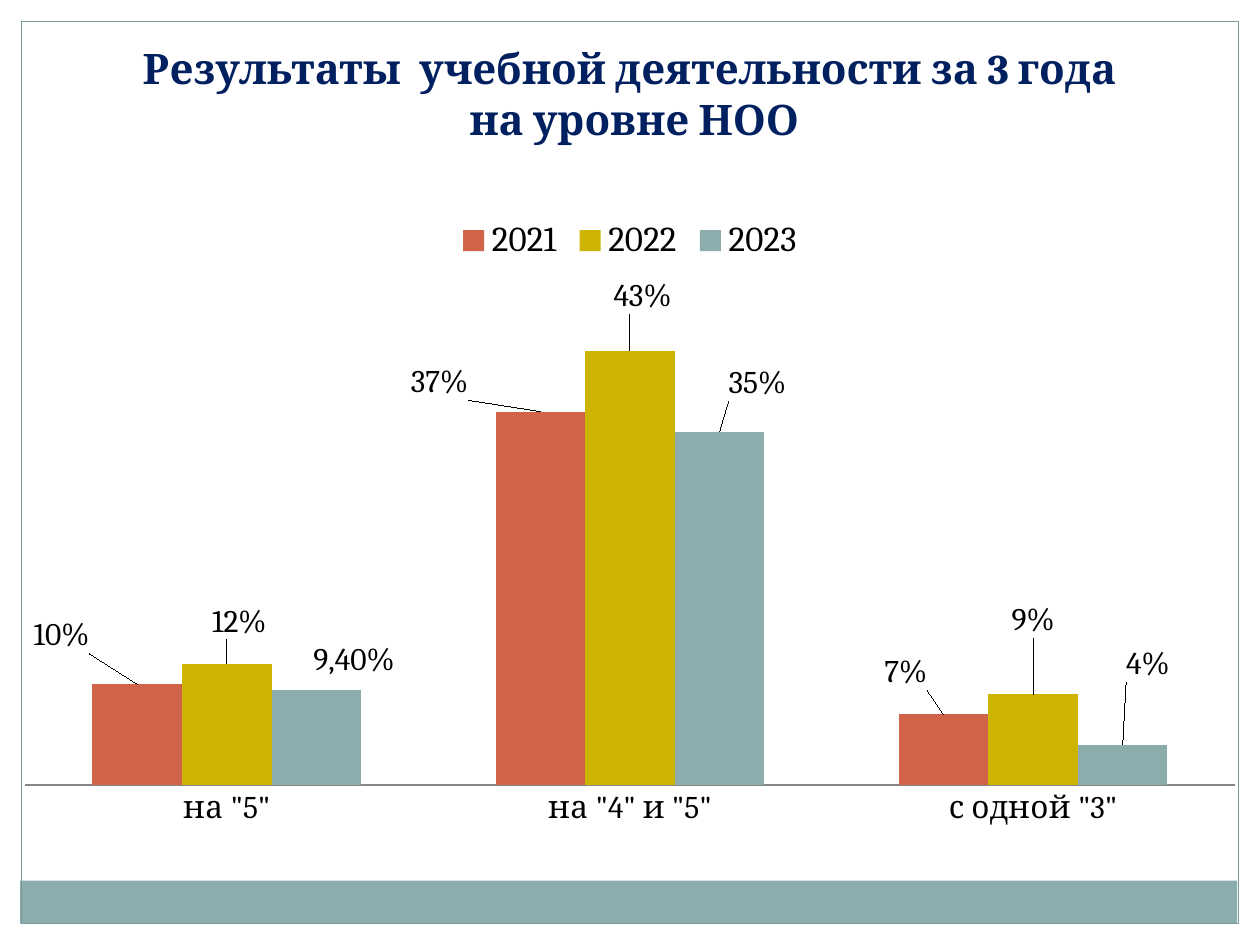
import pptx
import pptx.chart.data
import pptx.dml.color
import pptx.enum.chart
import pptx.enum.shapes
import pptx.enum.text
import pptx.oxml
import pptx.oxml.ns
import pptx.util
from dataclasses import dataclass


@dataclass(frozen=True)
class Theme:
    font: str = "Cambria"
    paper: str = "FFFFFF"
    ink: str = "000000"
    heading: str = "002060"
    band: str = "8CADAE"
    frame: str = "7C999A"
    axis: str = "878787"
    years: tuple = ("D16349", "CCB400", "8CADAE")
    heading_size: int = 24
    legend_size: int = 20
    label_size: int = 18


def rgb(value):
    return pptx.dml.color.RGBColor.from_string(value)


def assign(target, values):
    for name, value in values.items():
        setattr(target, name, value)


def manual_layout(**parts):
    """Chart layout element; each part is a share of the chart's size."""
    children = "".join(f'<c:{tag} val="{value}"/>' for tag, value in parts.items())
    return pptx.oxml.parse_xml(
        f'<c:layout {pptx.oxml.ns.nsdecls("c")}>'
        f"<c:manualLayout>{children}</c:manualLayout></c:layout>")


class SlideBuilder:
    """Places elements on a grid of 100 columns by 75 rows."""

    def __init__(self, deck, theme):
        self.theme = theme
        self.column = deck.slide_width / 100
        self.row = deck.slide_height / 75
        self.slide = deck.slides.add_slide(deck.slide_layouts[6])

    def box(self, left, top, width, height):
        return (round(left * self.column), round(top * self.row),
                round(width * self.column), round(height * self.row))

    def font(self, target, size, color, bold=False):
        assign(target, {"name": self.theme.font, "size": pptx.util.Pt(size), "bold": bold})
        target.color.rgb = rgb(color)

    def panel(self, place, fill=None, line=None):
        panel = self.slide.shapes.add_shape(
            pptx.enum.shapes.MSO_SHAPE.RECTANGLE, *self.box(*place))
        panel.shadow.inherit = False
        if fill:
            panel.fill.solid()
            panel.fill.fore_color.rgb = rgb(fill)
        else:
            panel.fill.background()
        if line:
            panel.line.color.rgb = rgb(line)
            panel.line.width = pptx.util.Pt(0.75)
        else:
            panel.line.fill.background()

    def heading(self, place, lines):
        frame = self.slide.shapes.add_textbox(*self.box(*place)).text_frame
        assign(frame, {"word_wrap": True,
                       "auto_size": pptx.enum.text.MSO_AUTO_SIZE.SHAPE_TO_FIT_TEXT})
        frame.text = "\n".join(lines)
        for paragraph in frame.paragraphs:
            paragraph.alignment = pptx.enum.text.PP_ALIGN.CENTER
            self.font(paragraph.runs[0].font, self.theme.heading_size,
                      self.theme.heading, bold=True)

    def column_chart(self, place, categories, results, plot, maximum):
        data = pptx.chart.data.CategoryChartData(number_format="0%")
        data.categories = categories
        for year, (values, _) in results.items():
            data.add_series(year, values)
        chart = self.slide.shapes.add_chart(
            pptx.enum.chart.XL_CHART_TYPE.COLUMN_CLUSTERED, *self.box(*place), data).chart
        assign(chart, {"has_title": False, "has_legend": True})
        self.font(chart.font, 10, self.theme.ink)

        # Legend and axes
        assign(chart.legend, {"position": pptx.enum.chart.XL_LEGEND_POSITION.TOP,
                              "include_in_layout": False})
        self.font(chart.legend.font, self.theme.legend_size, self.theme.ink)
        assign(chart.value_axis, {"visible": False, "has_major_gridlines": False,
                                  "minimum_scale": 0, "maximum_scale": maximum})
        no_tick = pptx.enum.chart.XL_TICK_MARK.NONE
        assign(chart.category_axis, {"major_tick_mark": no_tick, "minor_tick_mark": no_tick})
        chart.category_axis.format.line.color.rgb = rgb(self.theme.axis)
        self.font(chart.category_axis.tick_labels.font, self.theme.label_size, self.theme.ink)

        # Plot area
        area = chart._chartSpace.chart.plotArea
        for old in area.xpath("c:layout"):
            area.remove(old)
        area.insert(0, manual_layout(layoutTarget="inner", xMode="edge", yMode="edge", **plot))

        # Columns and their labels
        bars = chart.plots[0]
        assign(bars, {"gap_width": 150, "overlap": 0, "vary_by_categories": False})
        for series, color, (_, shifts) in zip(bars.series, self.theme.years, results.values()):
            series.format.fill.solid()
            series.format.fill.fore_color.rgb = rgb(color)
            assign(series.data_labels, {"show_value": True, "number_format": "0%",
                                        "number_format_is_linked": False})
            self.font(series.data_labels.font, self.theme.label_size, self.theme.ink)
            for index, shift in enumerate(shifts):
                self.point_label(series, index, *shift)

    def point_label(self, series, index, dx, dy, text=None):
        label = series.points[index].data_label
        if text:
            label.text_frame.text = text
            self.font(label.text_frame.paragraphs[0].runs[0].font,
                      self.theme.label_size, self.theme.ink)
        else:
            self.font(label.font, self.theme.label_size, self.theme.ink)
        label.position = pptx.enum.chart.XL_LABEL_POSITION.OUTSIDE_END
        element = series._element.xpath(f'c:dLbls/c:dLbl[c:idx/@val="{index}"]')[0]
        element.insert(1, manual_layout(x=dx, y=dy))


def main():
    deck = pptx.Presentation()
    assign(deck, {"slide_width": pptx.util.Inches(10), "slide_height": pptx.util.Inches(7.5)})
    theme = Theme()
    page = SlideBuilder(deck, theme)

    # White margins, bottom band and frame
    margin = 1.7
    for edge in ((0, 0, 100, margin), (100 - margin, 0, margin, 75), (0, 0, margin, 75)):
        page.panel(edge, fill=theme.paper)
    page.panel((1.6, 69.9, 96.6, 3.4), fill=theme.band)
    page.panel((margin, margin, 100 - 2 * margin, 75 - 2 * margin), line=theme.frame)

    # Results by year: values, then label shifts as shares of the chart
    results = {
        "2021": ((0.1, 0.37, 0.07), ((-0.06, -0.04), (-0.08, -0.01), (-0.03, -0.03))),
        "2022": ((0.12, 0.43, 0.09), ((0.01, -0.03), (0.01, -0.05), (0, -0.08))),
        "2023": ((0.094, 0.35, 0.04), ((0.03, -0.01, "9,40%"), (0.03, -0.04), (0.02, -0.09))),
    }
    page.column_chart((0, 16.2, 100, 50.4), ('на "5"', 'на "4" и "5"', 'с одной "3"'),
                      results, plot={"x": 0.02, "y": 0.12, "w": 0.96, "h": 0.795}, maximum=0.5)

    # Heading
    page.heading((3.5, 2.9, 93.7, 9.1),
                 ("Результаты  учебной деятельности за 3 года ", "на уровне НОО"))
    deck.save("out.pptx")


if __name__ == "__main__":
    main()
